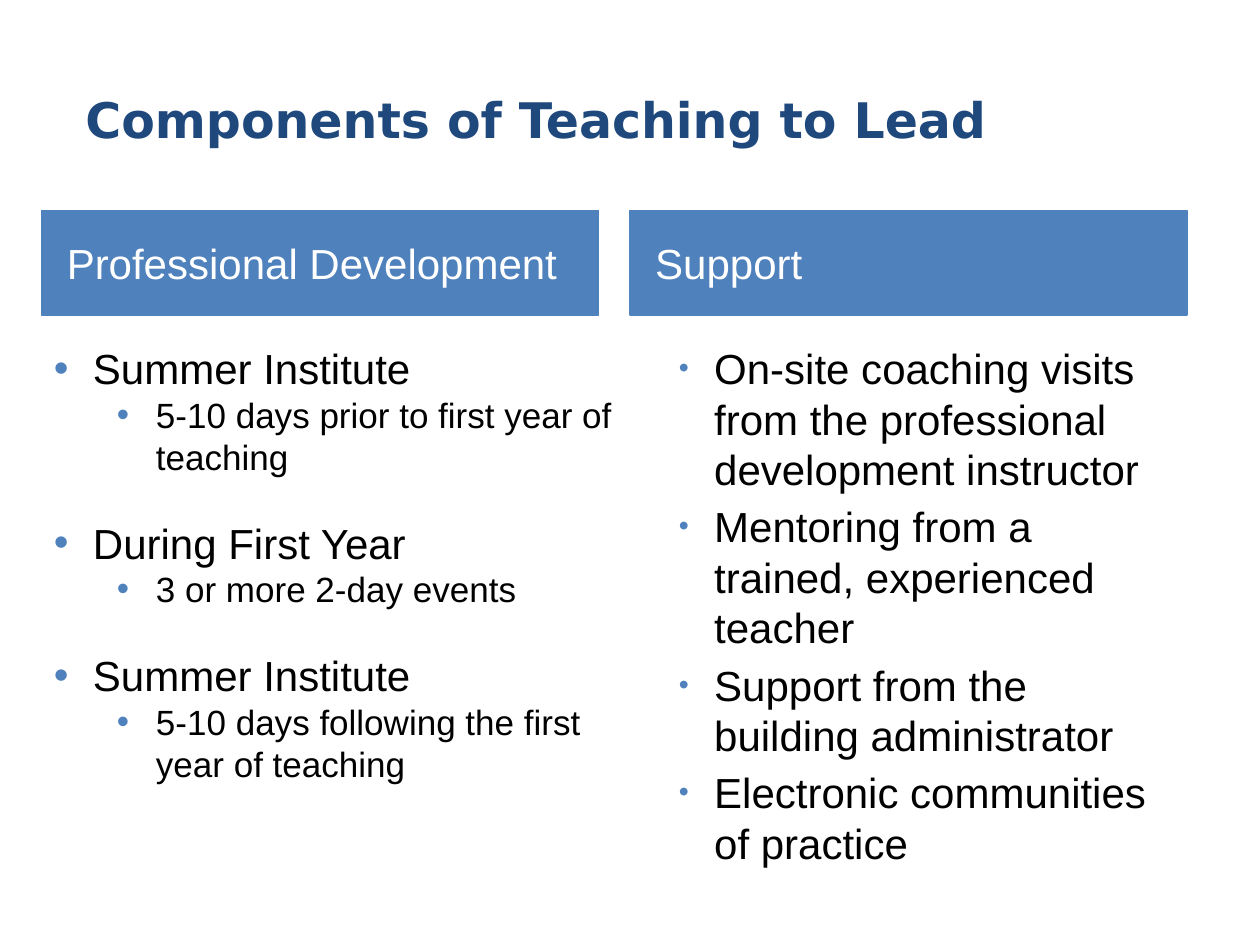
import pptx
import pptx.dml.color
import pptx.enum.shapes
import pptx.enum.text
import pptx.oxml.ns
import pptx.util
from lxml import etree

Inches = pptx.util.Inches
Pt = pptx.util.Pt
MIDDLE = pptx.enum.text.MSO_ANCHOR.MIDDLE
BLUE, NAVY, BLACK, WHITE = "4F81BD", "1F497D", "000000", "FFFFFF"

TOP = 2.67
HEADS = [(0.33, "Professional Development"), (5, "Support")]
EVENTS = [
    ("Summer Institute", "5-10 days prior to first year of teaching"),
    ("During First Year", "3 or more 2-day events"),
    ("Summer Institute", "5-10 days following the first year of teaching"),
]
SUPPORT = [
    "On-site coaching visits from the professional development instructor",
    "Mentoring from a trained, experienced teacher",
    "Support from the building administrator",
    "Electronic communities of practice",
]


def color(code):
    return pptx.dml.color.RGBColor.from_string(code)


def style(para, **form):
    """Set font values on a paragraph; Arial 24 black unless told otherwise."""
    form = {"name": "Arial", "size": Pt(24), **form}
    para.font.color.rgb = color(form.pop("ink", BLACK))
    for key, value in form.items():
        setattr(para.font, key, value)


def bullet(para, left, hang, scale=100):
    """Give a paragraph a blue bullet and a hanging indent in inches."""
    props = para._p.get_or_add_pPr()
    props.set("marL", str(Inches(left)))
    props.set("indent", str(-Inches(hang)))

    def add(root, tag, **attrs):
        return etree.SubElement(root, pptx.oxml.ns.qn(tag), **attrs)

    add(add(props, "a:buClr"), "a:srgbClr", val=BLUE)
    add(props, "a:buSzPct", val=str(scale * 1000))
    add(props, "a:buFont", typeface="Arial")
    add(props, "a:buChar", char="•")


def box(slide, left, top, width, height):
    area = slide.shapes.add_textbox(*map(Inches, (left, top, width, height)))
    area.text_frame.word_wrap = True
    return area.text_frame


def line(frame, text, gap=0):
    """Add a paragraph, with a gap in points above all but the first."""
    para = frame.paragraphs[0]
    if para.runs:
        para = frame.add_paragraph()
        para.space_before = Pt(gap)
    para.add_run().text = text
    return para


def title(slide, text):
    frame = box(slide, 0.58, 0.3, 8.92, 1.28)
    frame.vertical_anchor = MIDDLE
    style(line(frame, text), name="DejaVu Sans", size=Pt(28), bold=True, ink=NAVY)


def head(slide, left, text):
    shape = slide.shapes.add_shape(
        pptx.enum.shapes.MSO_SHAPE.RECTANGLE,
        *map(Inches, (left, 1.67, 4.42, 0.83)))
    shape.shadow.inherit = False
    shape.fill.solid()
    shape.fill.fore_color.rgb = color(BLUE)
    shape.line.color.rgb = color(BLUE)
    shape.line.width = Pt(0.75)
    frame = shape.text_frame
    frame.word_wrap = True
    frame.margin_left = Inches(0.2)
    frame.vertical_anchor = MIDDLE
    para = line(frame, text)
    para.alignment = pptx.enum.text.PP_ALIGN.LEFT
    style(para, ink=WHITE)


def events(slide):
    frame = box(slide, 0.33, TOP, 4.67, 3.67)
    for name, detail in EVENTS:
        para = line(frame, name, gap=23)
        bullet(para, 0.31, 0.31)
        style(para)
        para = line(frame, detail)
        para.level = 1
        bullet(para, 0.81, 0.31)
        style(para, size=Pt(20))


def support(slide):
    frame = box(slide, 5.17, TOP, 4.25, 3.92)
    for text in SUPPORT:
        para = line(frame, text, gap=4)
        bullet(para, 0.4, 0.28, scale=68)
        style(para)


def main():
    deck = pptx.Presentation()
    deck.slide_width, deck.slide_height = Inches(10), Inches(7.5)
    slide = deck.slides.add_slide(deck.slide_layouts[6])
    title(slide, "Components of Teaching to Lead")
    support(slide)
    for left, text in HEADS:
        head(slide, left, text)
    events(slide)
    deck.save("out.pptx")


if __name__ == "__main__":
    main()
